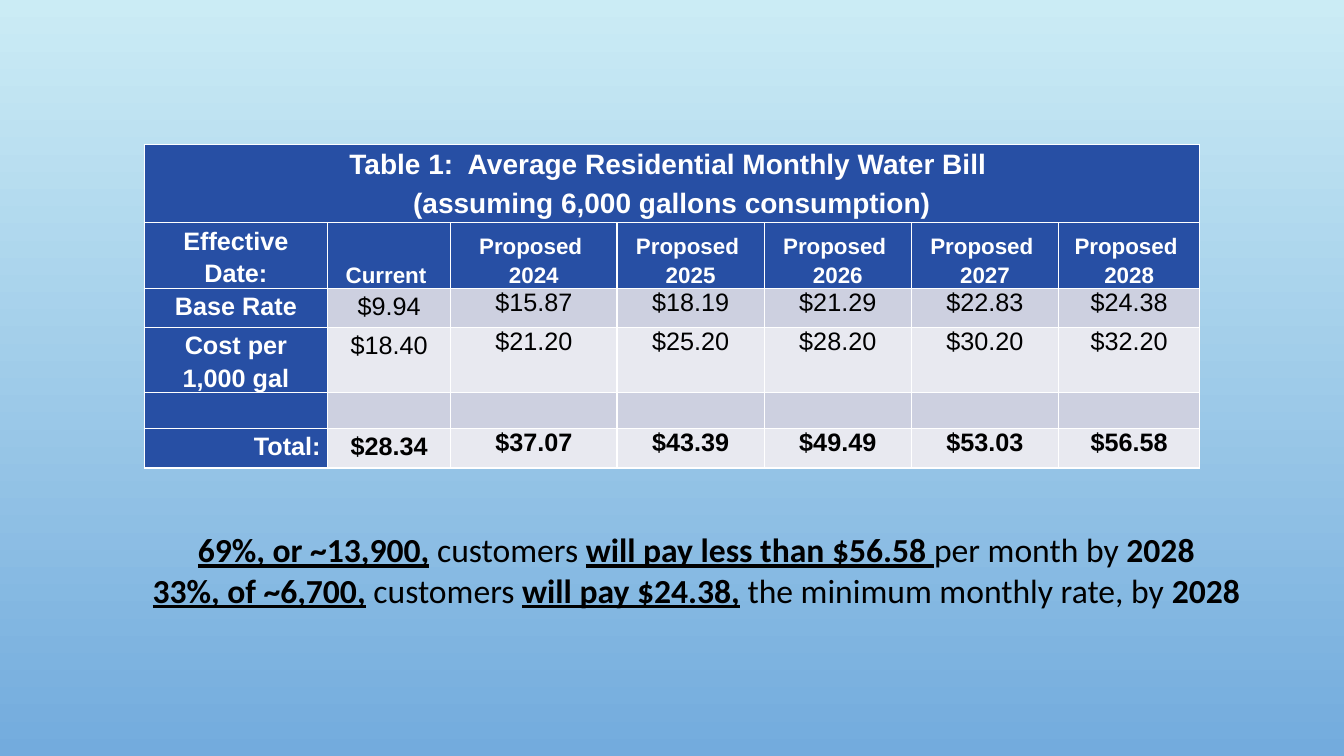
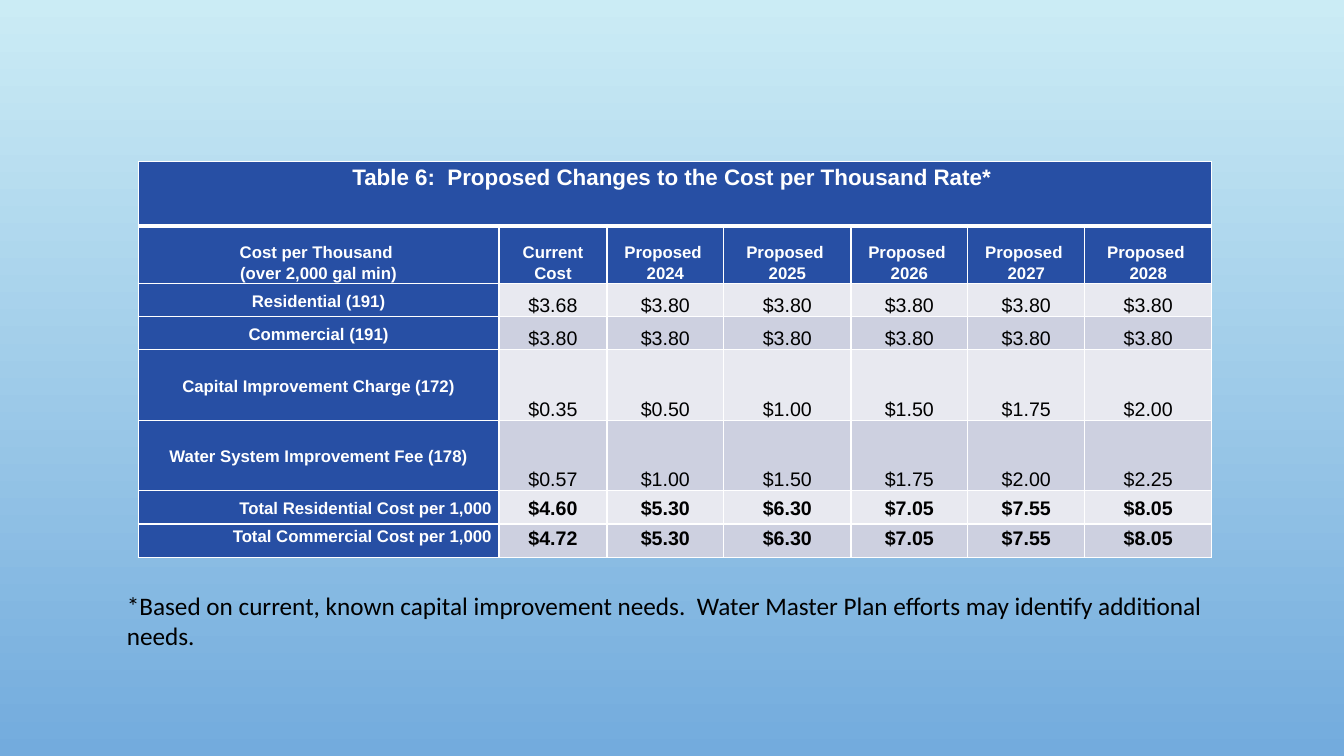
from dataclasses import dataclass, replace
from itertools import accumulate

from lxml.etree import SubElement
from pptx import Presentation
from pptx.dml.color import RGBColor
from pptx.enum.text import MSO_ANCHOR, PP_ALIGN
from pptx.oxml.ns import qn
from pptx.util import Inches, Pt

NAVY, WHITE, BLACK = "274FA4", "FFFFFF", "000000"
STRIPES = ["E8E9F0", "CDD0E0"]
SKY = ["CBECF5", "73ABDD"]
YEARS = range(2024, 2029)


@dataclass(frozen=True)
class Style:
    size: int
    color: str = WHITE
    bold: bool = True
    alignment: PP_ALIGN = PP_ALIGN.CENTER
    anchor: MSO_ANCHOR = MSO_ANCHOR.TOP
    spacing: float = 1.15


@dataclass(frozen=True)
class Row:
    height: float
    texts: list
    styles: list
    is_header: bool = False
    bottom_line: int = 1


def rgb(value):
    return RGBColor.from_string(value)


def apply_format(target, values):
    for name, value in values.items():
        setattr(target, name, value)


def add_span(para, text, color, **values):
    span = para.add_run()
    span.text = text
    apply_format(span.font, values)
    span.font.color.rgb = rgb(color)


def set_background(deck):
    fill = deck.slide_master.background.fill
    fill.gradient()
    fill.gradient_angle = 270
    for stop, color, position in zip(fill.gradient_stops, SKY, (0, 1)):
        stop.color.rgb = rgb(color)
        stop.position = position


def set_borders(cell, top, bottom):
    properties = cell._tc.get_or_add_tcPr()
    widths = {"a:lnL": 1, "a:lnR": 1, "a:lnT": top, "a:lnB": bottom}
    for index, (tag, width) in enumerate(widths.items()):
        line = SubElement(properties, qn(tag), w=str(Pt(width)))
        if width:
            fill = SubElement(line, qn("a:solidFill"))
            SubElement(fill, qn("a:srgbClr"), val=WHITE)
        else:
            SubElement(line, qn("a:noFill"))
        properties.insert(index, line)


def fill_cell(cell, text, style, background):
    apply_format(cell, {
        "margin_left": Inches(0.07), "margin_right": Inches(0.07),
        "margin_top": 0, "margin_bottom": 0, "vertical_anchor": style.anchor,
    })
    cell.fill.solid()
    cell.fill.fore_color.rgb = rgb(background)
    for index, line in enumerate(text.split("\n")):
        frame = cell.text_frame
        para = frame.add_paragraph() if index else frame.paragraphs[0]
        apply_format(para, {"alignment": style.alignment, "line_spacing": style.spacing})
        if line:
            add_span(para, line, style.color, name="Arial", size=Pt(style.size), bold=style.bold)


def add_rate_table(page, left, top, widths, rows):
    height = sum(row.height for row in rows)
    table = page.shapes.add_table(
        len(rows), len(widths), Inches(left), Inches(top), Inches(sum(widths)), Inches(height)
    ).table
    apply_format(table, {"first_row": False, "horz_banding": False})
    for column, width in zip(table.columns, widths):
        column.width = Inches(width)
    top_line = 1
    for index, row in enumerate(rows):
        table.rows[index].height = Inches(row.height)
        cells = list(table.rows[index].cells)
        for cell in cells:
            set_borders(cell, top_line, row.bottom_line)
        if len(row.texts) == 1:
            cells[0].merge(cells[-1])
        for column, (cell, text, style) in enumerate(zip(cells, row.texts, row.styles)):
            is_navy = row.is_header or column == 0
            fill_cell(cell, text, style, NAVY if is_navy else STRIPES[index % 2])
        top_line = row.bottom_line


def add_note(page, left, top, width, height, lines, size, alignment):
    box = page.shapes.add_textbox(Inches(left), Inches(top), Inches(width), Inches(height))
    frame = box.text_frame
    frame.word_wrap = True
    for index, spans in enumerate(lines):
        para = frame.add_paragraph() if index else frame.paragraphs[0]
        para.alignment = alignment
        for text, bold, underline in spans:
            add_span(para, text, BLACK, name="Calibri", size=Pt(size), bold=bold, underline=underline)


def title_row(height, text, size, bottom_line=1):
    return Row(height, [text], [Style(size)], True, bottom_line)


def header_row(height, label, current, label_size, size):
    texts = [label, current] + [f"Proposed \n{year}" for year in YEARS]
    style = Style(size, anchor=MSO_ANCHOR.BOTTOM)
    return Row(height, texts, [replace(style, size=label_size)] + [style] * 6, True)


def value_row(height, label, values, label_style, current_style, proposed_style):
    amounts = [f"${value:.2f}" for value in values] or [""] * 6
    return Row(height, [label] + amounts, [label_style, current_style] + [proposed_style] * 5)


def build_monthly_bill(page):
    label = Style(18)
    total_label = replace(label, alignment=PP_ALIGN.RIGHT)
    current = Style(18, BLACK, False)
    proposed = replace(current, spacing=1.0)
    plain = (label, current, proposed)
    strong = (total_label, replace(current, bold=True), replace(proposed, bold=True))
    add_rate_table(page, 1.43, 1.43, [1.82, 1.22, 1.65, 1.46, 1.46, 1.46, 1.4], [
        title_row(0.39, "Table 1:  Average Residential Monthly Water Bill ", 20, 0),
        title_row(0.39, "(assuming 6,000 gallons consumption)", 20),
        header_row(0.65, "Effective Date:", "Current ", 18, 16),
        value_row(0.39, "Base Rate", [9.94, 15.87, 18.19, 21.29, 22.83, 24.38], *plain),
        value_row(0.64, "Cost per 1,000 gal", [18.4, 21.2, 25.2, 28.2, 30.2, 32.2], *plain),
        value_row(0.36, "", [], *plain),
        value_row(0.39, "Total:", [28.34, 37.07, 43.39, 49.49, 53.03, 56.58], *strong),
    ])
    add_note(page, 1.2, 5.2, 11.41, 1.21, [
        [("69%, or ~13,900,", True, True), (" customers ", False, False),
         ("will pay less than $56.58 ", True, True), ("per month by ", False, False),
         ("2028", True, False)],
        [("33%, of ~6,700,", True, True), (" customers ", False, False),
         ("will pay $24.38,", True, True),
         (" the minimum monthly rate, by ", False, False), ("2028", True, False)],
    ], 24, PP_ALIGN.CENTER)


def build_thousand_rate(page):
    label = Style(12, anchor=MSO_ANCHOR.MIDDLE)
    rate = Style(14, BLACK, False, anchor=MSO_ANCHOR.BOTTOM, spacing=1.0)
    total_label = replace(label, alignment=PP_ALIGN.RIGHT)
    total = Style(14, BLACK, anchor=MSO_ANCHOR.MIDDLE)
    plain = (label, rate, rate)
    middle = (total_label, total, total)
    upper = [replace(style, anchor=MSO_ANCHOR.TOP) for style in middle]
    proposed_totals = [5.3, 6.3, 7.05, 7.55, 8.05]
    add_rate_table(page, 1.37, 1.6, [3.58, 1.07, 1.16, 1.26, 1.16, 1.16, 1.26], [
        title_row(0.64, "Table 6:  Proposed Changes to the Cost per Thousand Rate* ", 16, 3),
        header_row(0.57, "Cost per Thousand \n(over 2,000 gal min)", "Current Cost", 12, 12),
        value_row(0.33, "Residential (191)", [3.68] + [3.8] * 5, *plain),
        value_row(0.33, "Commercial (191)", [3.8] * 6, *plain),
        value_row(0.7, "Capital Improvement Charge (172)", [0.35, 0.5, 1, 1.5, 1.75, 2], *plain),
        value_row(0.7, "Water System Improvement Fee (178)", [0.57, 1, 1.5, 1.75, 2, 2.25], *plain),
        value_row(0.33, "Total Residential Cost per 1,000", [4.6] + proposed_totals, *middle),
        value_row(0.33, "Total Commercial Cost per 1,000", [4.72] + proposed_totals, *upper),
    ])
    note = (
        "*Based on current, known capital improvement needs.  "
        "Water Master Plan efforts may identify additional needs."
    )
    add_note(page, 1.16, 5.81, 11.47, 0.7, [[(note, False, False)]], 18, PP_ALIGN.LEFT)


def main():
    deck = Presentation()
    apply_format(deck, {"slide_width": Inches(13.33), "slide_height": Inches(7.5)})
    set_background(deck)
    for build in (build_monthly_bill, build_thousand_rate):
        build(deck.slides.add_slide(deck.slide_layouts[6]))
    deck.save("out.pptx")


if __name__ == "__main__":
    main()
